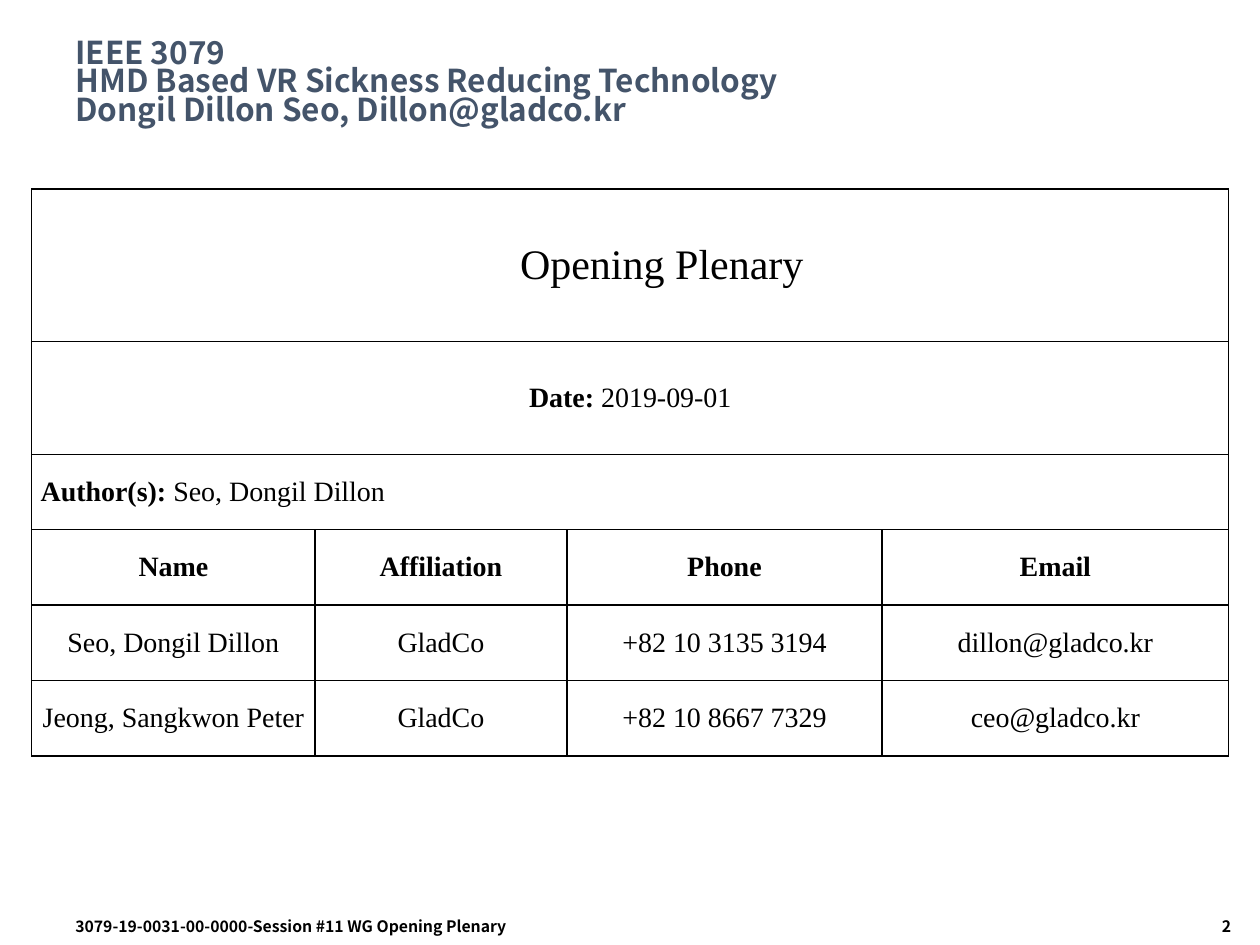
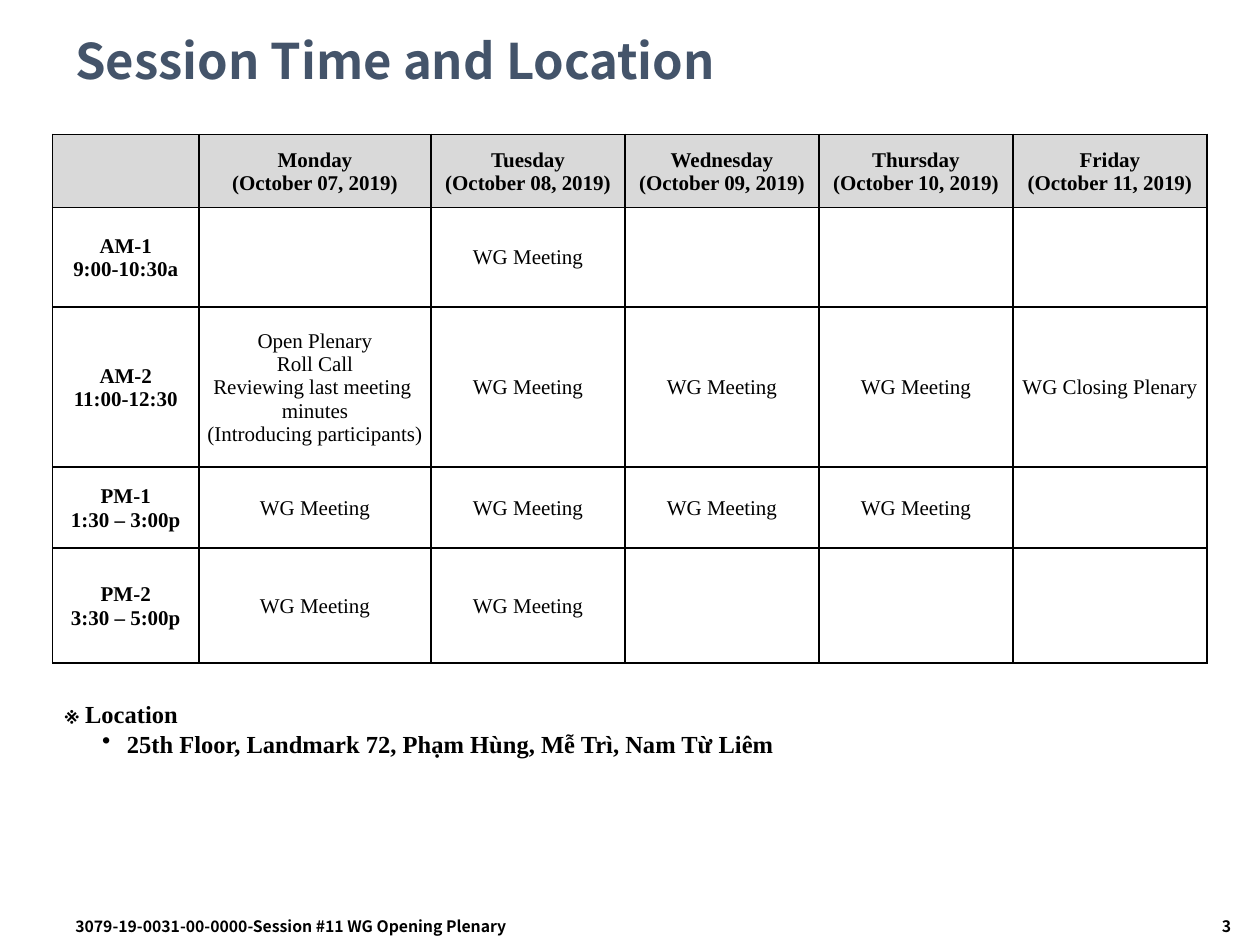
from lxml import etree
from pptx import Presentation
from pptx.dml.color import RGBColor
from pptx.enum.text import MSO_ANCHOR as Anchor, PP_ALIGN as Align
from pptx.oxml.ns import qn
from pptx.util import Cm, Pt

SANS, SERIF = "Noto Sans CJK KR", "Times New Roman"
BLACK, SLATE, GREY = "000000", "44546A", "D9D9D9"
FOOTER = "3079-19-0031-00-0000-Session #11 WG Opening Plenary"
MEET = "WG Meeting"


def color(code):
    return RGBColor.from_string(code)


def style(para, size, face=SERIF, bold=False, code=BLACK, align=None):
    para.alignment = align
    for run in para.runs:
        font = run.font
        font.size, font.name, font.bold = Pt(size), face, bold
        font.color.rgb = color(code)


def indent(para, left, first=0, bullet=None):
    """Set the left margin and first-line offset in cm, with an optional bullet."""
    props = para._p.get_or_add_pPr()
    props.set("marL", str(Cm(left)))
    props.set("indent", str(Cm(first)))
    if bullet:
        etree.SubElement(props, qn("a:buChar"), char=bullet)


def border(cell):
    """Draw a thin black line on all four sides of a cell."""
    props = cell._tc.get_or_add_tcPr()
    for side in ("lnL", "lnR", "lnT", "lnB"):
        line = etree.SubElement(props, qn(f"a:{side}"), w=str(Pt(1)))
        fill = etree.SubElement(line, qn("a:solidFill"))
        etree.SubElement(fill, qn("a:srgbClr"), val=BLACK)


class Deck:
    """Holds the shared style and the slide being filled."""

    def __init__(self):
        self.show = Presentation()
        self.show.slide_width, self.show.slide_height = Cm(25.4), Cm(19.05)
        self.slide = None

    def page(self, number, title, height, size, spacing):
        self.slide = self.show.slides.add_slide(self.show.slide_layouts[6])
        head = self.text(title, 1.27, 0.43, 22.86, height, size, SANS, True, SLATE)
        head.vertical_anchor = Anchor.MIDDLE
        head.paragraphs[0].line_spacing = spacing
        self.text(FOOTER, 1.27, 18.36, 11.23, 0.69, 9, SANS, True)
        self.text(str(number), 20.96, 18.36, 4.11, 0.69, 9, SANS, True,
                  align=Align.RIGHT)

    def text(self, words, left, top, width, height, size, face=SERIF,
             bold=False, code=BLACK, align=None):
        box = self.slide.shapes.add_textbox(Cm(left), Cm(top), Cm(width), Cm(height))
        frame = box.text_frame
        frame.word_wrap = True
        frame.text = words
        for para in frame.paragraphs:
            style(para, size, face, bold, code, align)
        return frame

    def table(self, left, top, cols, rows, pads):
        """Add a bordered, unfilled table; pads are left, top, right, bottom in cm."""
        grid = self.slide.shapes.add_table(
            len(rows), len(cols), Cm(left), Cm(top), Cm(sum(cols)), Cm(sum(rows))).table
        grid.first_row = grid.horz_banding = False
        for col, width in zip(grid.columns, cols):
            col.width = Cm(width)
        for row, height in zip(grid.rows, rows):
            row.height = Cm(height)
        for cell in grid.iter_cells():
            border(cell)
            cell.fill.background()
            cell.vertical_anchor = Anchor.MIDDLE
            (cell.margin_left, cell.margin_top,
             cell.margin_right, cell.margin_bottom) = map(Cm, pads)
        return grid

    def cell(self, cell, words, size, bold=False, align=Align.CENTER):
        cell.text_frame.text = words
        for para in cell.text_frame.paragraphs:
            style(para, size, bold=bold, align=align)

    def pair(self, cell, label, value, size, align):
        """Write a bold label followed by a plain value."""
        self.cell(cell, label, size, align=align)
        para = cell.text_frame.paragraphs[0]
        para.add_run().text = f" {value}"
        style(para, size, align=align)
        para.runs[0].font.bold = True


def cover(deck):
    deck.page(2, "IEEE 3079\vHMD Based VR Sickness Reducing Technology\v"
              "Dongil Dillon Seo, Dillon@gladco.kr", 2.54, 18, 0.75)
    people = [
        ("Name", "Affiliation", "Phone", "Email"),
        ("Seo, Dongil Dillon", "GladCo", "+82 10 3135 3194", "dillon@gladco.kr"),
        ("Jeong, Sangkwon Peter", "GladCo", "+82 10 8667 7329", "ceo@gladco.kr"),
    ]
    grid = deck.table(0.64, 3.81, [5.71, 5.08, 6.35, 6.99],
                      [3.07, 2.28] + [1.52] * 4, (0.18, 0, 0.18, 0))
    for row in range(3):
        grid.cell(row, 0).merge(grid.cell(row, 3))
    topic = grid.cell(0, 0)
    deck.cell(topic, "Opening Plenary", 24)
    indent(topic.text_frame.paragraphs[0], 1.27)
    deck.pair(grid.cell(1, 0), "Date:", "2019-09-01", 16, Align.CENTER)
    deck.pair(grid.cell(2, 0), "Author(s):", "Seo, Dongil Dillon", 16, Align.LEFT)
    for row, person in enumerate(people, 3):
        for col, words in enumerate(person):
            deck.cell(grid.cell(row, col), words, 16, bold=row == 3)


def agenda(deck):
    deck.page(3, "Session Time and Location", 1.7, 28, 0.9)
    days = ["Monday", "Tuesday", "Wednesday", "Thursday", "Friday"]
    opening = ("Open Plenary\nRoll Call\nReviewing last meeting \vminutes\n"
               "(Introducing participants)")
    plan = [
        [""] + [f"{day}\n(October {date:02}, 2019)" for date, day in enumerate(days, 7)],
        ["AM-1\n9:00-10:30a", "", MEET, "", "", ""],
        ["AM-2\n11:00-12:30", opening, MEET, MEET, MEET, "WG Closing Plenary"],
        ["PM-1\n1:30 – 3:00p", MEET, MEET, MEET, MEET, ""],
        ["PM-2\n3:30 – 5:00p", MEET, MEET, "", "", ""],
    ]
    grid = deck.table(1.06, 2.71, [2.95, 4.68] + [3.91] * 4,
                      [1.47, 2.01, 3.23, 1.63, 2.32], (0.03, 0.03, 0.03, 0))
    for row, slots in enumerate(plan):
        for col, words in enumerate(slots):
            cell = grid.cell(row, col)
            if row == 0:
                cell.fill.solid()
                cell.fill.fore_color.rgb = color(GREY)
            if words:
                deck.cell(cell, words, 12, bold=row == 0 or col == 0)
    place = deck.text("※ Location\n25th Floor, Landmark 72, Phạm Hùng, Mễ Trì, Nam Từ Liêm",
                      1.06, 13.97, 23.29, 1.45, 14, bold=True)
    indent(place.paragraphs[1], 1.25, -0.5, "•")


def main():
    deck = Deck()
    cover(deck)
    agenda(deck)
    deck.show.save("out.pptx")


if __name__ == "__main__":
    main()
